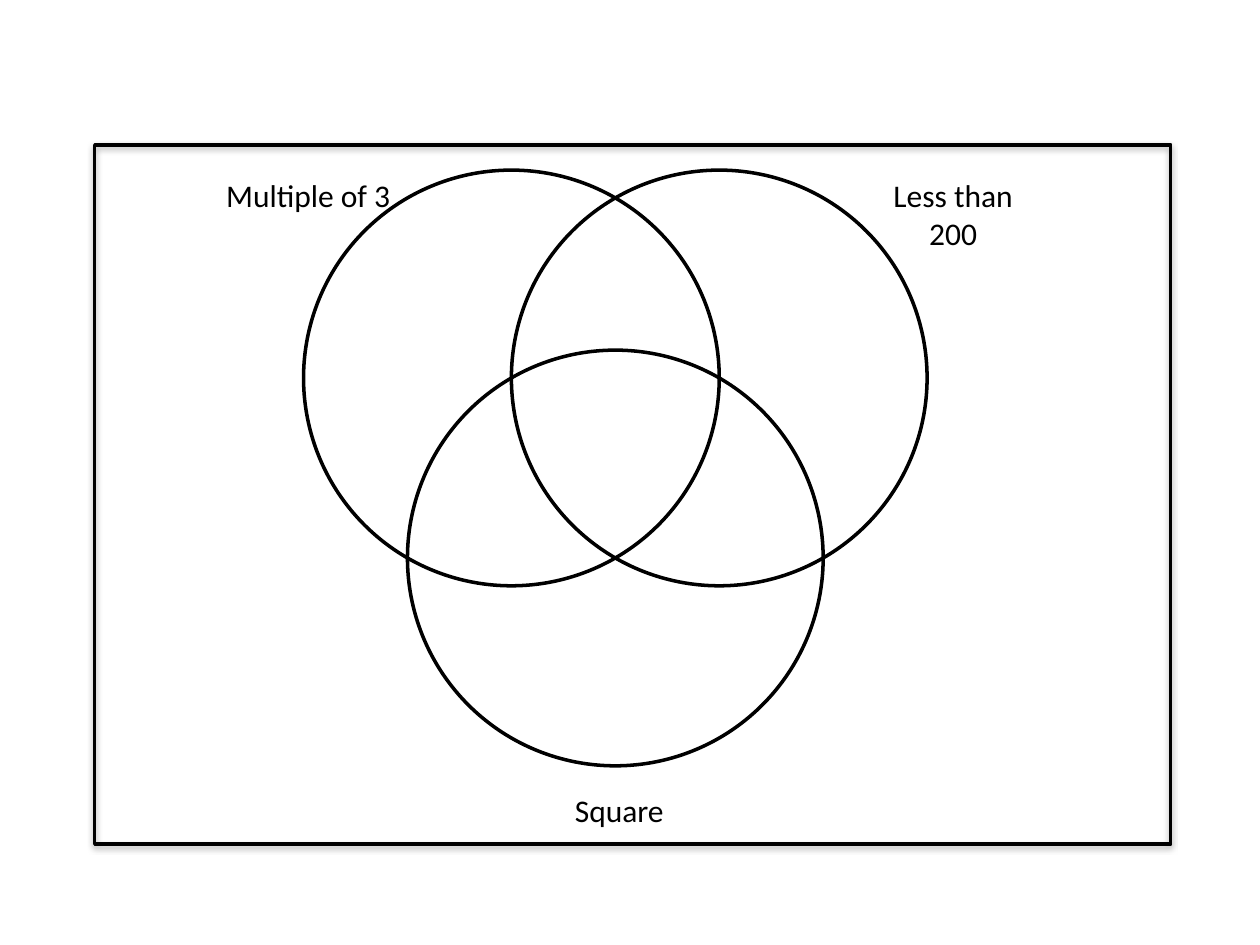
from dataclasses import dataclass
from math import sqrt

from pptx import Presentation
from pptx.dml.color import RGBColor
from pptx.enum.shapes import MSO_SHAPE
from pptx.enum.text import MSO_AUTO_SIZE, PP_ALIGN
from pptx.util import Cm, Pt

OVAL = MSO_SHAPE.OVAL
RECTANGLE = MSO_SHAPE.RECTANGLE
CENTER = PP_ALIGN.CENTER
FIT_SHAPE = MSO_AUTO_SIZE.SHAPE_TO_FIT_TEXT
BLANK_LAYOUT = 6


@dataclass(frozen=True)
class Theme:
    ink: RGBColor = RGBColor(0, 0, 0)
    font: str = "Calibri"
    label_size: Pt = Pt(18)
    line_width: Pt = Pt(2)


THEME = Theme()

RADIUS = 4.19
SETS_LEFT, SETS_TOP = 6.12, 3.43
LABEL_WIDTH = 3.99
# Text, left, top and height in centimetres
LABELS = [
    ("Multiple of 3", 4.22, 3.43, 1.02),
    ("Less than 200", 17.22, 3.43, 1.8),
    ("Square", 10.49, 15.82, 1.02),
]


def add_outline(shapes, kind, left, top, width, height):
    """Add an unfilled shape with the theme's line."""
    shape = shapes.add_shape(kind, Cm(left), Cm(top), Cm(width), Cm(height))
    shape.fill.background()
    shape.line.color.rgb = THEME.ink
    shape.line.width = THEME.line_width
    return shape


def add_sets(page):
    """Group three circles whose centres form an equilateral triangle."""
    group = page.shapes.add_group_shape()
    for across, down in [(0, 0), (1, 0), (0.5, sqrt(3) / 2)]:
        circle = add_outline(
            group.shapes, OVAL,
            SETS_LEFT + across * RADIUS, SETS_TOP + down * RADIUS,
            2 * RADIUS, 2 * RADIUS,
        )
        circle.shadow.inherit = False


def add_label(page, text, left, top, height):
    box = page.shapes.add_textbox(Cm(left), Cm(top), Cm(LABEL_WIDTH), Cm(height))
    frame = box.text_frame
    frame.word_wrap = True
    frame.auto_size = FIT_SHAPE
    frame.text = text
    para = frame.paragraphs[0]
    para.alignment = CENTER
    font = para.runs[0].font
    font.name = THEME.font
    font.size = THEME.label_size
    font.color.rgb = THEME.ink


def main():
    deck = Presentation()
    deck.slide_width, deck.slide_height = Cm(25.4), Cm(19.05)
    page = deck.slides.add_slide(deck.slide_layouts[BLANK_LAYOUT])
    add_sets(page)
    for label in LABELS:
        add_label(page, *label)
    # The surrounding frame keeps the soft shadow of the deck's theme
    add_outline(page.shapes, RECTANGLE, 1.91, 2.92, 21.69, 14.1)
    deck.save("out.pptx")


if __name__ == "__main__":
    main()
